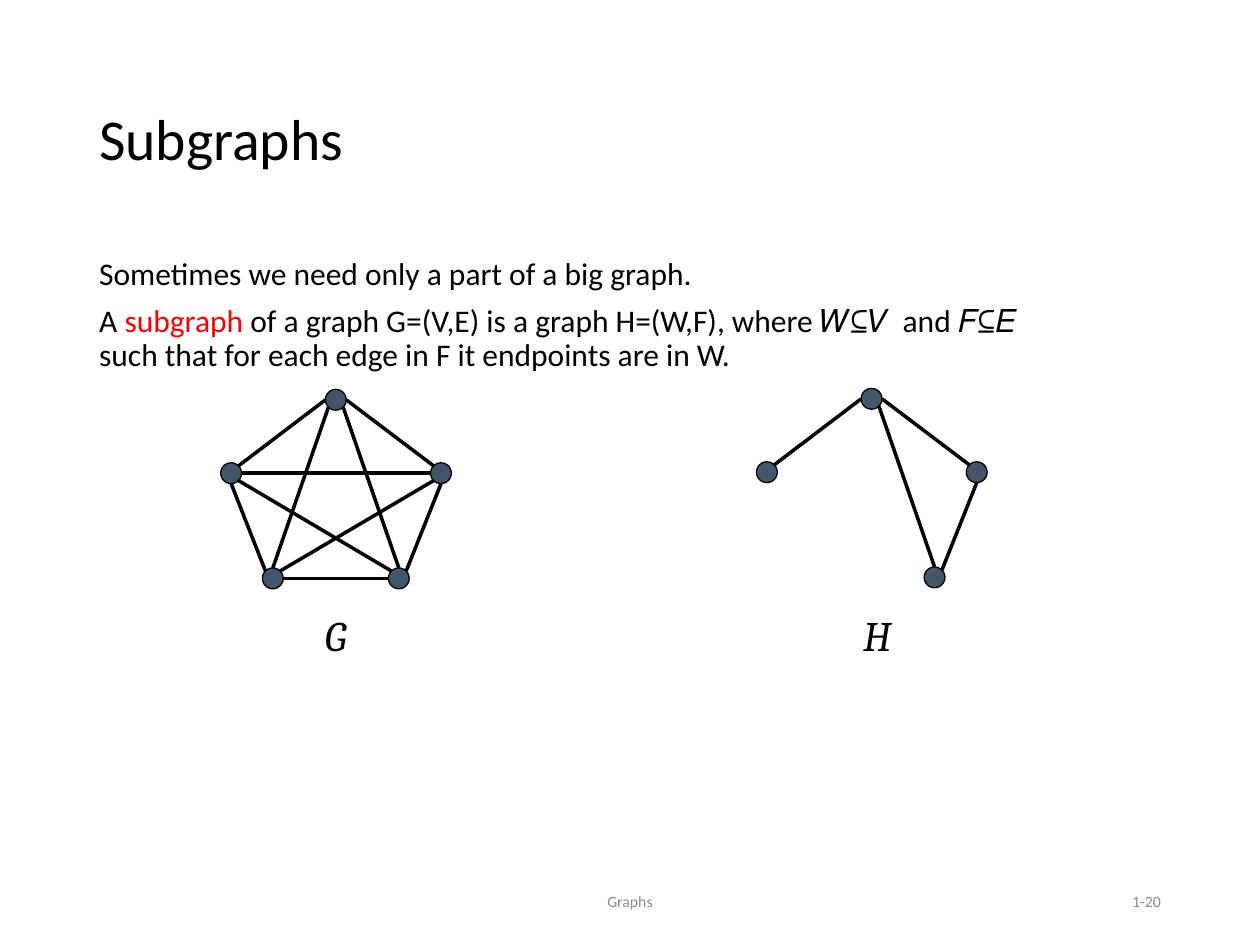
from math import cos, pi, sin

from lxml.etree import SubElement
from pptx import Presentation
from pptx.dml.color import RGBColor
from pptx.enum.shapes import MSO_CONNECTOR as Connector, MSO_SHAPE as Shape
from pptx.enum.text import MSO_ANCHOR as Anchor, PP_ALIGN as Align
from pptx.oxml.ns import qn
from pptx.util import Cm, Pt

BLACK, RED, GRAY, SLATE = "000000", "FF0000", "8C8C8C", "44546A"
RADIUS = 0.21
NODES = {
    "top": (6.77, 8.06),
    "right": (8.89, 9.54),
    "left": (4.66, 9.54),
    "low right": (8.04, 11.66),
    "low left": (5.5, 11.66),
}
SITES = ["E", "SE", "S", "SW", "W", "NW", "N", "NE"]
EDGES = [
    ("top", "SE", "low right", "N"),
    ("left", "SE", "low right", "NW"),
    ("right", "W", "left", "E"),
    ("right", "SW", "low left", "NE"),
    ("top", "SW", "low left", "N"),
    ("top", "W", "left", "NE"),
    ("left", "S", "low left", "NW"),
    ("top", "E", "right", "NW"),
    ("right", "S", "low right", "NE"),
    ("low right", "W", "low left", "E"),
]
SUBGRAPH_NODES = ["top", "right", "left", "low right"]
SUBGRAPH_EDGES = [EDGES[index] for index in (0, 5, 7, 8)]


def color(value):
    return RGBColor.from_string(value)


def style_paragraph(paragraph, size, font="Calibri", tint=BLACK):
    paragraph.font.name = font
    paragraph.font.size = Pt(size)
    paragraph.font.color.rgb = color(tint)


def add_text_box(shapes, left, top, width, height, anchor=Anchor.TOP, wrap=True):
    box = shapes.add_textbox(Cm(left), Cm(top), Cm(width), Cm(height))
    frame = box.text_frame
    frame.word_wrap = wrap
    frame.vertical_anchor = anchor
    return frame


def add_title(slide, text):
    paragraph = add_text_box(slide.shapes, 1.75, 1.02, 21.9, 3.68, Anchor.MIDDLE).paragraphs[0]
    paragraph.text = text
    paragraph.line_spacing = 0.9
    style_paragraph(paragraph, 33)


def add_body(slide):
    frame = add_text_box(slide.shapes, 1.75, 5.08, 21.9, 12.09)
    introduction, definition = frame.paragraphs[0], frame.add_paragraph()
    introduction.text = "Sometimes we need only a part of a big graph."
    definition.add_run().text = "A "
    term = definition.add_run()
    term.text = "subgraph"
    term.font.color.rgb = color(RED)
    definition.add_run().text = " of a graph G=(V,E) is a graph H=(W,F), where 𝑊⊆𝑉  and 𝐹⊆𝐸 "
    definition.add_line_break()
    definition.add_run().text = "such that for each edge in F it endpoints are in W."
    for paragraph in (introduction, definition):
        paragraph.line_spacing = 0.9
        paragraph.space_before = Pt(7.5)
        style_paragraph(paragraph, 18)


def add_footer(slide, text, left, width, align):
    paragraph = add_text_box(slide.shapes, left, 17.65, width, 1.02, Anchor.MIDDLE).paragraphs[0]
    paragraph.text = text
    paragraph.alignment = align
    style_paragraph(paragraph, 9, tint=GRAY)


def add_node(shapes, x, y):
    node = shapes.add_shape(
        Shape.OVAL, Cm(x - RADIUS), Cm(y - RADIUS), Cm(2 * RADIUS), Cm(2 * RADIUS)
    )
    node.shadow.inherit = False
    node.fill.solid()
    node.fill.fore_color.rgb = color(SLATE)
    node.line.color.rgb = color(BLACK)
    node.line.width = Pt(0.75)


def site_point(center, site):
    angle = SITES.index(site) * pi / 4
    return center[0] + RADIUS * cos(angle), center[1] + RADIUS * sin(angle)


def add_edge(shapes, start, end):
    edge = shapes.add_connector(Connector.STRAIGHT, *map(Cm, start + end))
    edge.line.color.rgb = color(BLACK)
    edge.line.width = Pt(2)
    SubElement(edge._element.spPr, qn("a:effectLst"))


def add_graph(slide, name, nodes, edges, label_left, shift_x=0, shift_y=0):
    shapes = slide.shapes.add_group_shape().shapes
    centers = {node: (NODES[node][0] + shift_x, NODES[node][1] + shift_y) for node in nodes}
    for center in centers.values():
        add_node(shapes, *center)
    for source, source_site, target, target_site in edges:
        add_edge(
            shapes,
            site_point(centers[source], source_site),
            site_point(centers[target], target_site),
        )
    paragraph = add_text_box(shapes, label_left, 12.17, 0.93, 1.02, wrap=False).paragraphs[0]
    paragraph.text = name
    style_paragraph(paragraph, 24, "Cambria")
    paragraph.font.italic = True


def main():
    presentation = Presentation()
    presentation.slide_width, presentation.slide_height = Cm(25.4), Cm(19.05)
    slide = presentation.slides.add_slide(presentation.slide_layouts[6])
    add_title(slide, "Subgraphs")
    add_body(slide)
    add_footer(slide, "Graphs", 8.41, 8.58, Align.CENTER)
    add_footer(slide, "1-20", 17.94, 5.71, Align.RIGHT)
    add_graph(slide, "G", NODES, EDGES, 6.3)
    add_graph(slide, "H", SUBGRAPH_NODES, SUBGRAPH_EDGES, 17.15, 10.8, -0.02)
    presentation.save("out.pptx")


if __name__ == "__main__":
    main()
